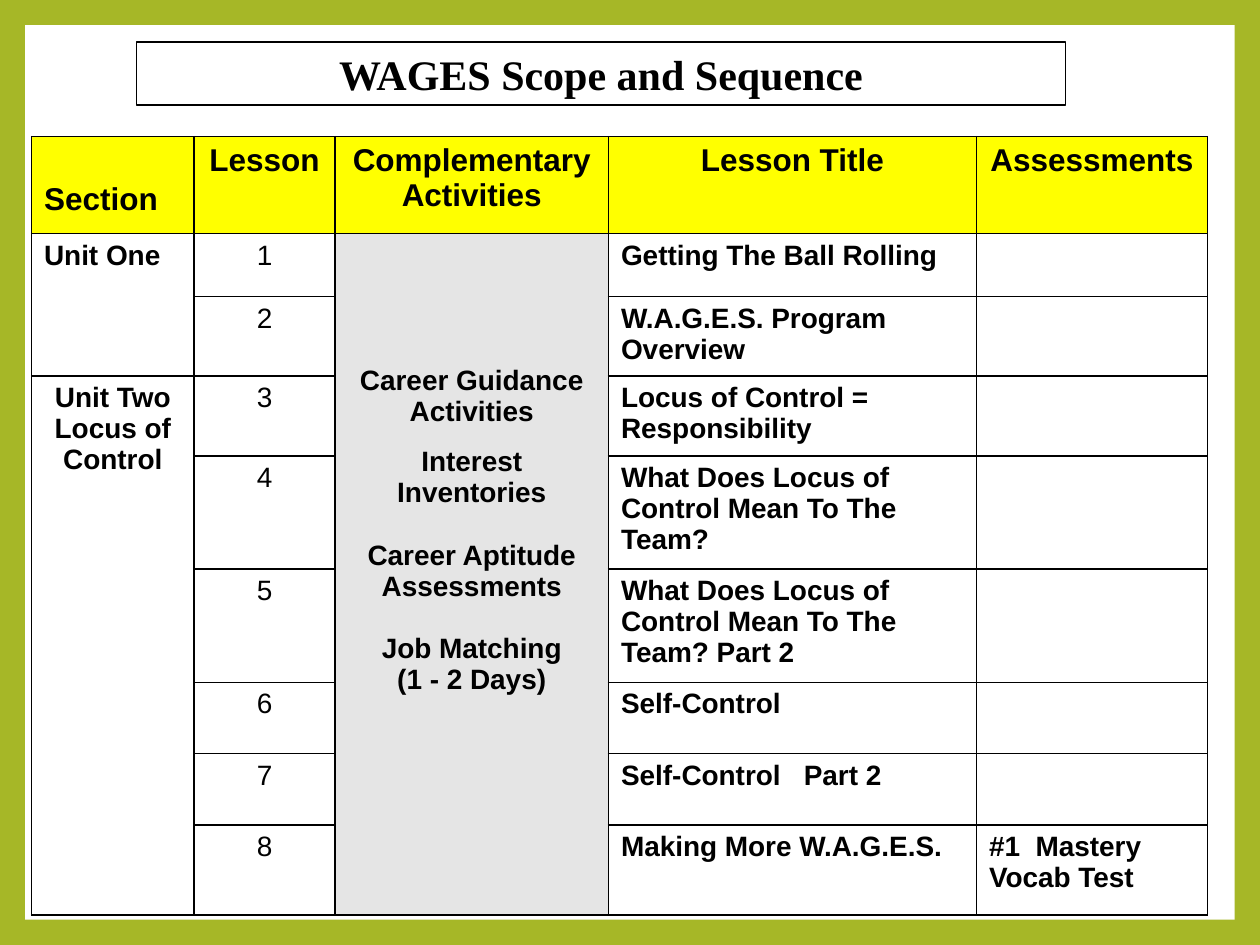
from lxml.etree import SubElement
from pptx import Presentation
from pptx.dml.color import RGBColor
from pptx.enum.shapes import MSO_SHAPE
from pptx.enum.text import MSO_ANCHOR, PP_ALIGN
from pptx.oxml.ns import qn
from pptx.util import Pt

COLORS = {"frame": "A6B727", "paper": "FFFFFF", "ink": "000000",
          "header": "FFFF00", "activities": "E5E5E5"}
LEFT, CENTER = PP_ALIGN.LEFT, PP_ALIGN.CENTER
COLUMN_WIDTHS = [93, 80.5, 156.25, 210.25, 132]
ROW_HEIGHTS = [55.5, 36, 45.5, 45.5, 64.75, 64.75, 40.75, 40.75, 51.5]
HEADERS = ["Section", "Lesson", "Complementary Activities", "Lesson Title", "Assessments"]
LESSONS = [
    "Getting The Ball Rolling",
    "W.A.G.E.S. Program Overview",
    "Locus of Control = Responsibility",
    "What Does Locus of Control Mean To The Team?",
    "What Does Locus of Control Mean To The Team? Part 2",
    "Self-Control",
    "Self-Control   Part 2",
    "Making More W.A.G.E.S.",
]
ACTIVITIES = [
    ("Career Guidance", 0), ("Activities", 0), ("Interest Inventories", 11),
    ("Career Aptitude Assessments", 18), ("Job Matching", 18), ("(1 - 2 Days)", 0),
]


class SlideBuilder:
    def __init__(self, slide, font="Arial"):
        self.slide = slide
        self.font = font

    def color(self, name):
        return RGBColor.from_string(COLORS[name])

    def paint(self, fill, name):
        fill.solid()
        fill.fore_color.rgb = self.color(name)

    def place(self, shape, left, top, width, height):
        box = {"left": left, "top": top, "width": width, "height": height}
        for name, value in box.items():
            setattr(shape, name, Pt(value))

    def add_text(self, paragraph, text, size, bold=True, align=LEFT, before=0, font=None):
        paragraph.alignment = align
        paragraph.space_before = Pt(before)
        run = paragraph.add_run()
        run.text = text
        values = {"name": font or self.font, "size": Pt(size), "bold": bold}
        for name, value in values.items():
            setattr(run.font, name, value)
        run.font.color.rgb = self.color("ink")

    def background(self, name):
        self.paint(self.slide.background.fill, name)

    def panel(self, name, *box):
        shape = self.slide.shapes.add_shape(MSO_SHAPE.RECTANGLE, *map(Pt, box))
        shape.shadow.inherit = False
        self.paint(shape.fill, name)
        shape.line.fill.background()
        tree = self.slide.shapes.element
        tree.remove(shape.element)
        tree.insert(2, shape.element)

    def title(self, text, *box):
        shape = self.slide.shapes.title
        self.place(shape, *box)
        self.paint(shape.fill, "paper")
        self.paint(shape.line.fill, "ink")
        shape.line.width = Pt(0.75)
        shape.text_frame.vertical_anchor = MSO_ANCHOR.MIDDLE
        self.add_text(shape.text_frame.paragraphs[0], text, 24, align=CENTER,
                      font="Times New Roman")

    def table(self, left, top, widths, heights):
        frame = self.slide.shapes.add_table(
            len(heights), len(widths), Pt(left), Pt(top), Pt(sum(widths)), Pt(sum(heights)))
        table = frame.table
        table.first_row = table.horz_banding = False
        for column, width in zip(table.columns, widths):
            column.width = Pt(width)
        for row, height in zip(table.rows, heights):
            row.height = Pt(height)
        for cell in table.iter_cells():
            self.borders(cell)
            self.paint(cell.fill, "paper")
        return table

    def borders(self, cell):
        properties = cell._tc.get_or_add_tcPr()
        for side in ("a:lnL", "a:lnR", "a:lnT", "a:lnB"):
            line = SubElement(properties, qn(side), w=str(Pt(1)))
            fill = SubElement(line, qn("a:solidFill"))
            SubElement(fill, qn("a:srgbClr"), val=COLORS["ink"])

    def cell(self, cell, lines, size=16, bold=True, align=LEFT, fill="paper", top=3.6):
        self.paint(cell.fill, fill)
        cell.margin_top = Pt(top)
        frame = cell.text_frame
        for index, (text, before) in enumerate(lines):
            paragraph = frame.add_paragraph() if index else frame.paragraphs[0]
            self.add_text(paragraph, text, size, bold, align, before)


def main():
    presentation = Presentation()
    presentation.slide_width, presentation.slide_height = Pt(720), Pt(540)
    slide = presentation.slides.add_slide(presentation.slide_layouts[5])
    builder = SlideBuilder(slide)
    builder.background("frame")
    builder.panel("paper", 14.4, 14.4, 691.2, 511.2)
    builder.title("WAGES Scope and Sequence", 78, 24, 531, 36)

    table = builder.table(18, 78, COLUMN_WIDTHS, ROW_HEIGHTS)
    for column, text in enumerate(HEADERS):
        first = column == 0
        builder.cell(table.cell(0, column), [(text, 0)], 18, fill="header",
                     align=LEFT if first else CENTER, top=26 if first else 3.6)
    for number, lesson in enumerate(LESSONS, 1):
        builder.cell(table.cell(number, 1), [(str(number), 0)], bold=False, align=CENTER)
        builder.cell(table.cell(number, 3), [(lesson, 0)])
    builder.cell(table.cell(8, 4), [("#1  Mastery Vocab Test", 0)])

    for first, last, column in ((1, 2, 0), (3, 8, 0), (1, 8, 2)):
        table.cell(first, column).merge(table.cell(last, column))
    builder.cell(table.cell(1, 0), [("Unit One", 0)])
    builder.cell(table.cell(3, 0), [("Unit Two", 0), ("Locus of Control", 0)], align=CENTER)
    builder.cell(table.cell(1, 2), ACTIVITIES, align=CENTER, fill="activities", top=75)

    presentation.save("out.pptx")


if __name__ == "__main__":
    main()
